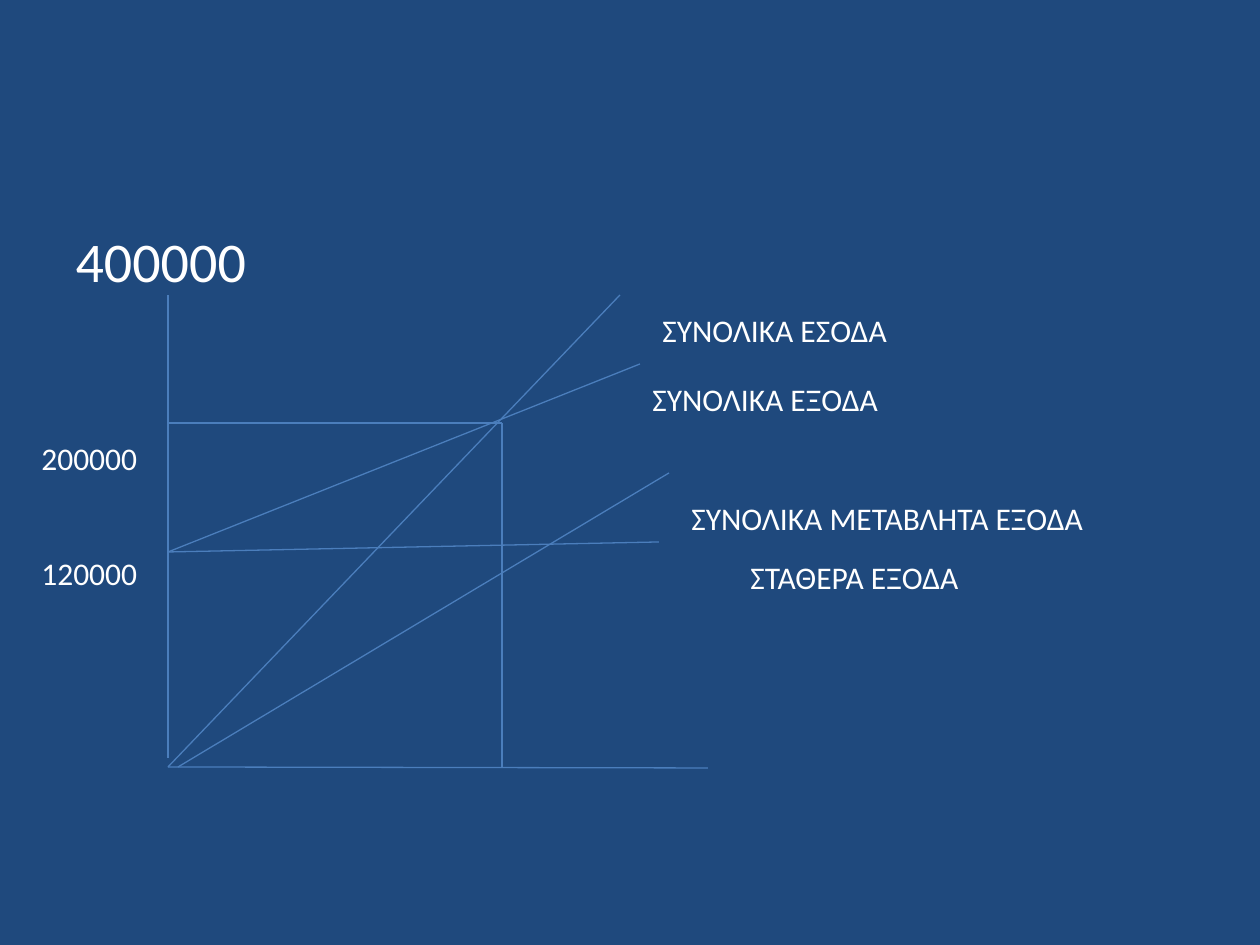
from lxml import etree
from pptx import Presentation
from pptx import util as u
from pptx.dml.color import RGBColor
from pptx.enum import shapes, text
from pptx.oxml.ns import qn

PX = 914400 // 126
COLORS = {"background": "1F497D", "line": "4B7EBC", "text": "FFFFFF"}


def format_text(paragraph, size):
    font = paragraph.font
    for name, value in {"name": "Calibri", "size": u.Pt(size)}.items():
        setattr(font, name, value)
    font.color.rgb = RGBColor.from_string(COLORS["text"])


def add_label(left, top, width, height, lines, gap=0):
    label = slide.shapes.add_textbox(left * PX, top * PX, width * PX, height * PX)
    frame = label.text_frame
    frame.text = "\n".join(lines)
    frame.word_wrap = False
    frame.auto_size = text.MSO_AUTO_SIZE.SHAPE_TO_FIT_TEXT
    for index, paragraph in enumerate(frame.paragraphs):
        format_text(paragraph, 18)
        if index:
            paragraph.space_before = u.Pt(gap)


prs = Presentation()
prs.slide_width, prs.slide_height = 1260 * PX, 945 * PX
slide = prs.slides.add_slide(prs.slide_layouts[1])
slide.background.fill.solid()
slide.background.fill.fore_color.rgb = RGBColor.from_string(COLORS["background"])

# Top value of the axis, in the body placeholder; the slide has no title
title = slide.shapes.title.element
title.getparent().remove(title)
axis_top = slide.placeholders[1]
for name, value in {"left": 63, "top": 220, "width": 1134, "height": 624}.items():
    setattr(axis_top, name, value * PX)
axis_top.text_frame.text = "400000"
top_value = axis_top.text_frame.paragraphs[0]
format_text(top_value, 32)
etree.SubElement(top_value._p.get_or_add_pPr(), qn("a:buNone"))

# Axes, cost and revenue lines, break-even guides
axis_x, base_y, fixed_y = 168, 767, 552
even_x, even_y = 502, 423
chart_lines = [
    (axis_x, 295, axis_x, 758),            # value axis
    (axis_x, base_y, 708, 768),            # quantity axis
    (axis_x, base_y, 620, 295),            # total revenue
    (axis_x, fixed_y, 659, 542),           # fixed costs
    (178, base_y, 669, 473),               # variable costs
    (axis_x, fixed_y, 640, 364),           # total costs
    (axis_x, even_y, even_x, even_y),      # break-even value
    (even_x, even_y, even_x, 768),         # break-even quantity
]
for ends in chart_lines:
    line = slide.shapes.add_connector(
        shapes.MSO_CONNECTOR.STRAIGHT, *(end * PX for end in ends))
    line.line.width = u.Pt(0.75)
    line.line.color.rgb = RGBColor.from_string(COLORS["line"])
    etree.SubElement(line.element.spPr, qn("a:effectLst"))

# Line names
for left, top, width, name in [
    (650, 305, 252, "ΣΥΝΟΛΙΚΑ ΕΣΟΔΑ"),
    (640, 374, 253, "ΣΥΝΟΛΙΚΑ ΕΞΟΔΑ"),
    (679, 493, 421, "ΣΥΝΟΛΙΚΑ ΜΕΤΑΒΛΗΤΑ ΕΞΟΔΑ"),
    (738, 552, 234, "ΣΤΑΘΕΡΑ ΕΞΟΔΑ"),
]:
    add_label(left, top, width, 50, [name])

# Lower axis values
add_label(29, 433, 122, 165, ["200000", "120000"], gap=44)

prs.save("out.pptx")
